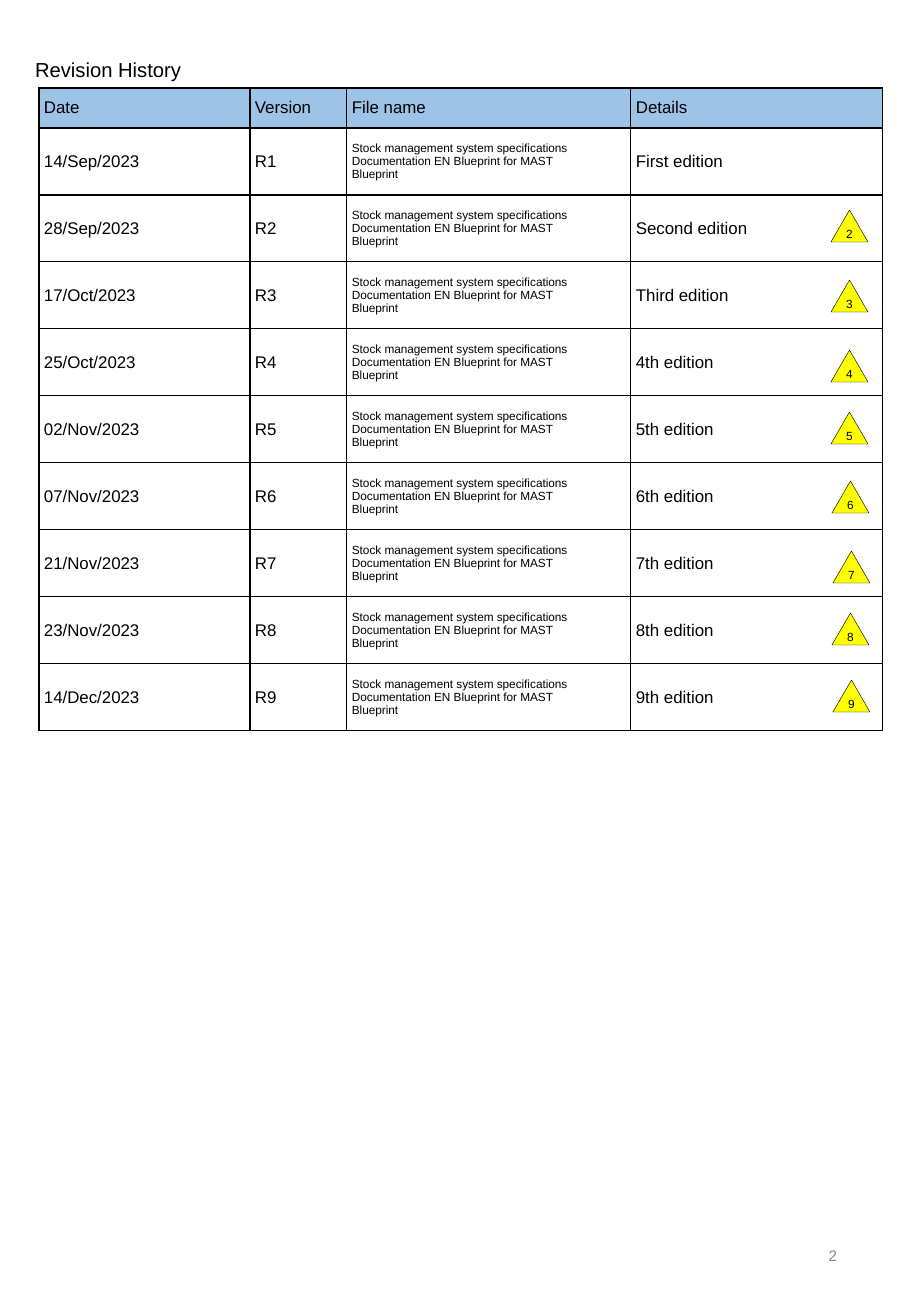
from dataclasses import dataclass

from lxml.etree import SubElement
from pptx import Presentation
from pptx.dml.color import RGBColor
from pptx.enum.shapes import MSO_SHAPE
from pptx.enum.text import MSO_ANCHOR, MSO_AUTO_SIZE, PP_ALIGN
from pptx.oxml.ns import qn
from pptx.util import Pt

# Content
TITLE = "Revision History"
PAGE_NUMBER = "2"
HEADERS = ("Date", "Version", "File name", "Details")
FILE_NAME = ("Stock management system specifications\n"
             "Documentation EN Blueprint for MAST\n"
             "Blueprint")
REVISIONS = [
    ("14/Sep/2023", "First edition"),
    ("28/Sep/2023", "Second edition"),
    ("17/Oct/2023", "Third edition"),
    ("25/Oct/2023", "4th edition"),
    ("02/Nov/2023", "5th edition"),
    ("07/Nov/2023", "6th edition"),
    ("21/Nov/2023", "7th edition"),
    ("23/Nov/2023", "8th edition"),
    ("14/Dec/2023", "9th edition"),
]
# Revision number: left, top of its hand-placed marker
MARKERS = {2: (831, 210), 3: (831, 280), 4: (831, 350), 5: (831, 412),
           6: (832, 481), 7: (833, 551), 8: (832, 613), 9: (833, 680)}

# Layout in px
SLIDE_W, SLIDE_H = 911, 1316
TABLE_LEFT, TABLE_TOP = 39, 88
COLUMNS = (211, 97, 284, 252)
HEADER_H, ROW_H = 40, 67
MARKER_W, MARKER_H = 37, 32


@dataclass(frozen=True)
class Theme:
    font: str = "Arial"
    ink: str = "000000"
    muted: str = "8C8C8C"
    header: str = "9DC3E6"
    marker: str = "FFFF00"
    title_size: int = 12
    body_size: int = 10
    page_size: int = 9
    small_size: int = 7
    border: float = 0.75
    outline: float = 0.25


THEME = Theme()


def px(n):
    return n * 7526


def rgb(value):
    return RGBColor.from_string(value)


def put_text(tf, text, size=THEME.body_size, color=THEME.ink,
             align=PP_ALIGN.LEFT):
    for i, line in enumerate(text.split("\n")):
        p = tf.paragraphs[0] if i == 0 else tf.add_paragraph()
        p.alignment = align
        r = p.add_run()
        r.text = line
        r.font.name = THEME.font
        r.font.size = Pt(size)
        r.font.color.rgb = rgb(color)


def add_borders(cell):
    tc_pr = cell._tc.get_or_add_tcPr()
    for side in ("lnL", "lnR", "lnT", "lnB"):
        ln = SubElement(tc_pr, qn(f"a:{side}"), w=str(Pt(THEME.border)))
        fill = SubElement(ln, qn("a:solidFill"))
        SubElement(fill, qn("a:srgbClr"), val=THEME.ink)


def add_title(s):
    sp = s.shapes.title
    sp.left, sp.top, sp.width, sp.height = map(px, (15, 51, 190, 36))
    tf = sp.text_frame
    tf.auto_size = MSO_AUTO_SIZE.NONE
    tf.word_wrap = False
    tf.vertical_anchor = MSO_ANCHOR.MIDDLE
    tf.margin_left = px(20)
    put_text(tf, TITLE, size=THEME.title_size)


def add_history(s):
    rows = [HEADERS] + [(date, f"R{n}", FILE_NAME, details)
                        for n, (date, details) in enumerate(REVISIONS, 1)]
    heights = [HEADER_H] + [ROW_H] * len(REVISIONS)
    table = s.shapes.add_table(
        len(rows), len(COLUMNS), px(TABLE_LEFT), px(TABLE_TOP),
        px(sum(COLUMNS)), px(sum(heights))).table
    table.first_row = table.horz_banding = False
    for column, width in zip(table.columns, COLUMNS):
        column.width = px(width)
    for i, (row, height) in enumerate(zip(rows, heights)):
        table.rows[i].height = px(height)
        for j, text in enumerate(row):
            cell = table.cell(i, j)
            cell.vertical_anchor = MSO_ANCHOR.MIDDLE
            cell.margin_left = px(5)
            add_borders(cell)
            if i == 0:
                cell.fill.solid()
                cell.fill.fore_color.rgb = rgb(THEME.header)
            else:
                cell.fill.background()
            small = text == FILE_NAME
            put_text(cell.text_frame, text,
                     size=THEME.small_size if small else THEME.body_size)


def add_page_number(s):
    tf = s.shapes.add_textbox(*map(px, (644, 1220, 205, 70))).text_frame
    tf.word_wrap = True
    tf.vertical_anchor = MSO_ANCHOR.MIDDLE
    put_text(tf, PAGE_NUMBER, size=THEME.page_size, color=THEME.muted,
             align=PP_ALIGN.RIGHT)


def add_marker(s, number, left, top):
    sp = s.shapes.add_shape(MSO_SHAPE.ISOSCELES_TRIANGLE, px(left), px(top),
                            px(MARKER_W), px(MARKER_H))
    sp.shadow.inherit = False
    sp.fill.solid()
    sp.fill.fore_color.rgb = rgb(THEME.marker)
    sp.line.color.rgb = rgb(THEME.ink)
    sp.line.width = Pt(THEME.outline)
    tf = sp.text_frame
    tf.margin_left = tf.margin_right = tf.margin_top = tf.margin_bottom = 0
    tf.vertical_anchor = MSO_ANCHOR.MIDDLE
    put_text(tf, str(number), size=THEME.small_size, align=PP_ALIGN.CENTER)


def main():
    prs = Presentation()
    prs.slide_width, prs.slide_height = px(SLIDE_W), px(SLIDE_H)
    s = prs.slides.add_slide(prs.slide_layouts.get_by_name("Title Only"))
    add_title(s)
    add_history(s)
    add_page_number(s)
    for number, (left, top) in MARKERS.items():
        add_marker(s, number, left, top)
    prs.save("out.pptx")


if __name__ == "__main__":
    main()
